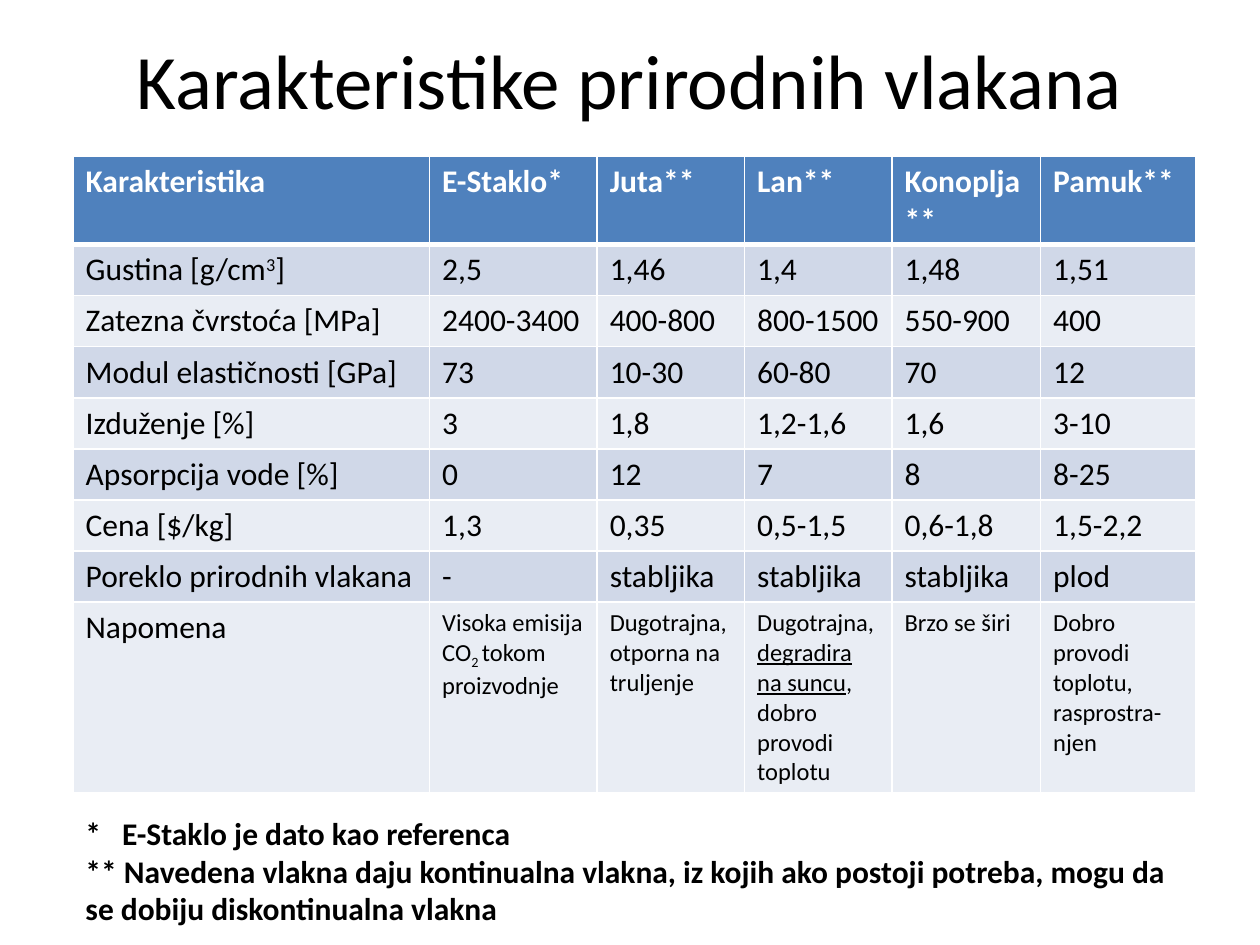
from dataclasses import dataclass
from typing import Optional

from lxml.etree import SubElement
from pptx import Presentation
from pptx.dml.color import RGBColor
from pptx.enum.text import MSO_ANCHOR, PP_ALIGN
from pptx.oxml import parse_xml
from pptx.oxml.ns import qn
from pptx.util import Inches, Pt


@dataclass(frozen=True)
class Theme:
    font: str = "Calibri"
    title_size: int = 44
    body_size: int = 18
    remark_size: int = 14
    text: str = "000000"
    header_text: str = "FFFFFF"
    header_fill: str = "4F81BD"
    bands: tuple = ("D0D8E8", "E9EDF4")
    border: str = "FFFFFF"
    thin: float = 1
    thick: float = 3


@dataclass(frozen=True)
class Span:
    text: str
    baseline: Optional[int] = None
    underline: bool = False


@dataclass(frozen=True)
class Box:
    left: float
    top: float
    width: float
    height: float

    def lengths(self) -> list:
        return [Inches(value) for value in (self.left, self.top, self.width, self.height)]


THEME = Theme()
TITLE_BOX = Box(0.5, 0, 9, 1.25)
TABLE_BOX = Box(0.58, 1.24, 8.92, 5.04)
FOOTNOTE_BOX = Box(0.58, 6.41, 8.92, 1.01)
FOOTNOTE_TAB = 0.29
COLUMN_WIDTHS = (2.83, 1.33, 1.17, 1.17, 1.18, 1.23)
HEADER_HEIGHT, REMARK_HEIGHT = 0.69, 1.51

HEADER = ("Karakteristika", "E-Staklo*", "Juta**", "Lan**", "Konoplja**", "Pamuk**")
PROPERTIES = (
    ((Span("Gustina [g/cm"), Span("3", baseline=30), Span("]")),
     "2,5", "1,46", "1,4", "1,48", "1,51"),
    ("Zatezna čvrstoća [MPa]", "2400-3400", "400-800", "800-1500", "550-900", "400"),
    ("Modul elastičnosti [GPa]", "73", "10-30", "60-80", "70", "12"),
    ("Izduženje [%]", "3", "1,8", "1,2-1,6", "1,6", "3-10"),
    ("Apsorpcija vode [%]", "0", "12", "7", "8", "8-25"),
    ("Cena [$/kg]", "1,3", "0,35", "0,5-1,5", "0,6-1,8", "1,5-2,2"),
    ("Poreklo prirodnih vlakana", "-", "stabljika", "stabljika", "stabljika", "plod"),
)
REMARKS = (
    "Napomena",
    (Span("Visoka emisija CO"), Span("2 ", baseline=-25), Span("tokom proizvodnje")),
    "Dugotrajna, otporna na truljenje",
    (Span("Dugotrajna, "), Span("degradira na suncu", underline=True),
     Span(", dobro provodi toplotu")),
    "Brzo se širi",
    "Dobro provodi toplotu, rasprostra-njen",
)
FOOTNOTES = (
    "*\tE-Staklo je dato kao referenca",
    "** Navedena vlakna daju kontinualna vlakna, iz kojih ako postoji potreba, "
    "mogu da se dobiju diskontinualna vlakna",
)


def write(paragraph, content, size: int, color: str = THEME.text, bold: bool = False) -> None:
    spans = (Span(content),) if isinstance(content, str) else content
    for span in spans:
        run = paragraph.add_run()
        run.text = span.text
        if span.underline:
            run.font.underline = True
        if span.baseline is not None:
            run.font._element.set("baseline", str(span.baseline * 1000))
    font = paragraph.font
    font.name, font.size, font.bold = THEME.font, Pt(size), bold
    font.color.rgb = RGBColor.from_string(color)


def add_text_frame(slide, box: Box):
    frame = slide.shapes.add_textbox(*box.lengths()).text_frame
    frame.word_wrap = True
    return frame


def set_borders(cell, widths: dict) -> None:
    properties = cell._tc.get_or_add_tcPr()
    for index, (side, width) in enumerate(widths.items()):
        properties.insert(index, parse_xml(
            f'<a:ln{side} xmlns:a="http://schemas.openxmlformats.org/drawingml/2006/main" '
            f'w="{Pt(width)}"><a:solidFill><a:srgbClr val="{THEME.border}"/>'
            f'</a:solidFill></a:ln{side}>'))


def add_title(slide) -> None:
    frame = add_text_frame(slide, TITLE_BOX)
    frame.vertical_anchor = MSO_ANCHOR.MIDDLE
    paragraph = frame.paragraphs[0]
    paragraph.alignment = PP_ALIGN.CENTER
    write(paragraph, "Karakteristike prirodnih vlakana", THEME.title_size)


def add_fibre_table(slide) -> None:
    rows = (HEADER, *PROPERTIES, REMARKS)
    last = len(rows) - 1
    table = slide.shapes.add_table(len(rows), len(HEADER), *TABLE_BOX.lengths()).table
    for column, width in zip(table.columns, COLUMN_WIDTHS):
        column.width = Inches(width)
    property_height = (TABLE_BOX.height - HEADER_HEIGHT - REMARK_HEIGHT) / len(PROPERTIES)
    heights = (HEADER_HEIGHT, *[property_height] * len(PROPERTIES), REMARK_HEIGHT)
    for row_index, (contents, height) in enumerate(zip(rows, heights)):
        table.rows[row_index].height = Inches(height)
        is_header = row_index == 0
        fill = THEME.header_fill if is_header else THEME.bands[(row_index - 1) % 2]
        color = THEME.header_text if is_header else THEME.text
        top = THEME.thick if row_index == 1 else THEME.thin
        bottom = THEME.thick if is_header else THEME.thin
        for column_index, content in enumerate(contents):
            cell = table.cell(row_index, column_index)
            is_remark = row_index == last and column_index > 0
            size = THEME.remark_size if is_remark else THEME.body_size
            cell.fill.solid()
            cell.fill.fore_color.rgb = RGBColor.from_string(fill)
            set_borders(cell, {"L": THEME.thin, "R": THEME.thin, "T": top, "B": bottom})
            write(cell.text_frame.paragraphs[0], content, size, color, bold=is_header)


def add_footnotes(slide) -> None:
    frame = add_text_frame(slide, FOOTNOTE_BOX)
    for index, note in enumerate(FOOTNOTES):
        paragraph = frame.add_paragraph() if index else frame.paragraphs[0]
        if "\t" in note:
            tabs = SubElement(paragraph._p.get_or_add_pPr(), qn("a:tabLst"))
            SubElement(tabs, qn("a:tab"), pos=str(Inches(FOOTNOTE_TAB)), algn="l")
        write(paragraph, note, THEME.body_size, bold=True)


def main() -> None:
    presentation = Presentation()
    presentation.slide_width, presentation.slide_height = Inches(10), Inches(7.5)
    slide = presentation.slides.add_slide(presentation.slide_layouts[6])
    add_title(slide)
    add_fibre_table(slide)
    add_footnotes(slide)
    presentation.save("out.pptx")


if __name__ == "__main__":
    main()
